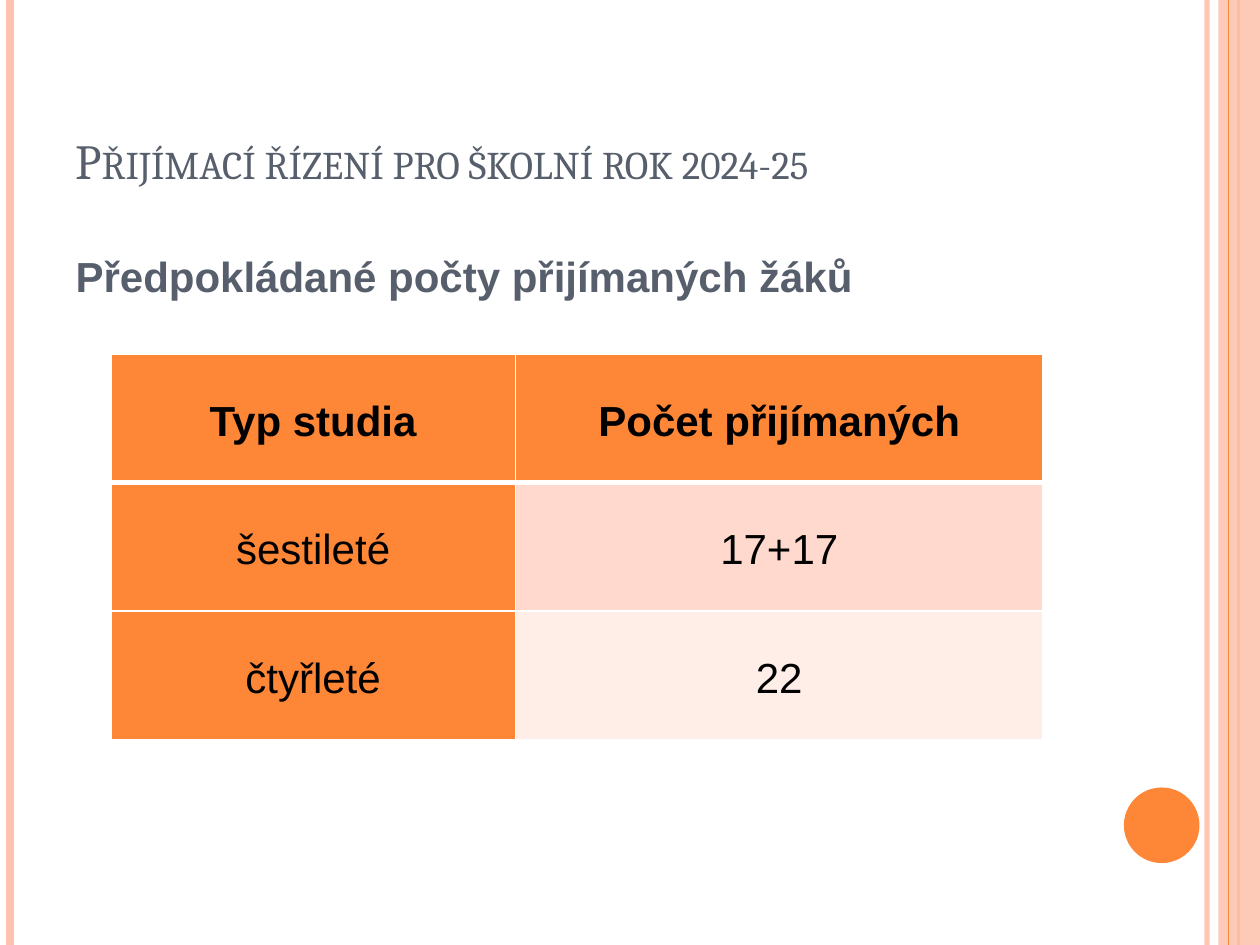
from dataclasses import dataclass

from lxml import etree
from pptx import Presentation
from pptx.dml.color import RGBColor
from pptx.enum.shapes import MSO_CONNECTOR, MSO_SHAPE
from pptx.enum.text import MSO_ANCHOR, MSO_AUTO_SIZE, PP_ALIGN
from pptx.oxml.ns import qn
from pptx.util import Inches, Pt

STRAIGHT = MSO_CONNECTOR.STRAIGHT
RECTANGLE = MSO_SHAPE.RECTANGLE
OVAL = MSO_SHAPE.OVAL
TOP, MIDDLE, BOTTOM = MSO_ANCHOR.TOP, MSO_ANCHOR.MIDDLE, MSO_ANCHOR.BOTTOM
LEFT, CENTER = PP_ALIGN.LEFT, PP_ALIGN.CENTER
NO_AUTOFIT = MSO_AUTO_SIZE.NONE

ORANGE = RGBColor(0xFE, 0x86, 0x37)
PEACH = RGBColor(0xFE, 0xC3, 0xAE)
BAND_DARK = RGBColor(0xFF, 0xD9, 0xCE)
BAND_LIGHT = RGBColor(0xFF, 0xED, 0xE8)
SLATE = RGBColor(0x57, 0x5F, 0x6D)
BLACK = RGBColor(0, 0, 0)
WHITE = RGBColor(0xFF, 0xFF, 0xFF)

SLIDE_WIDTH, SLIDE_HEIGHT = 10, 7.5


@dataclass
class Stripe:
    x: float
    color: RGBColor
    weight: float
    opacity: int = 100


@dataclass
class StudyRow:
    study: str
    count: str
    count_fill: RGBColor
    bold: bool = False
    bottom_border: float = 1


BACK_STRIPES = [
    Stripe(9.58, PEACH, 3, 93),
    Stripe(0.08, PEACH, 4.5),
    Stripe(9.83, ORANGE, 1.5),
]
FRONT_STRIPE = Stripe(9.75, ORANGE, 0.75)

ROWS = [
    StudyRow("Typ studia", "Počet přijímaných", ORANGE, True, 3),
    StudyRow("šestileté", "17+17", BAND_DARK),
    StudyRow("čtyřleté", "22", BAND_LIGHT),
]
COLUMN_WIDTHS = [3.21, 4.19]
ROW_HEIGHT = 1.02


def set_opacity(element, percent: int) -> None:
    color = next(element.iter(qn("a:srgbClr")))
    etree.SubElement(color, qn("a:alpha"), val=str(percent * 1000))


def draw_stripe(slide, stripe: Stripe) -> None:
    x = Inches(stripe.x)
    connector = slide.shapes.add_connector(STRAIGHT, x, 0, x, Inches(SLIDE_HEIGHT))
    connector.line.color.rgb = stripe.color
    connector.line.width = Pt(stripe.weight)
    properties = connector._element.spPr
    if stripe.opacity < 100:
        set_opacity(properties, stripe.opacity)
    etree.SubElement(properties, qn("a:effectLst"))


def draw_shape(slide, kind, left: float, top: float, width: float, height: float,
               color: RGBColor, opacity: int = 100) -> None:
    shape = slide.shapes.add_shape(
        kind, Inches(left), Inches(top), Inches(width), Inches(height))
    shape.shadow.inherit = False
    shape.fill.solid()
    shape.fill.fore_color.rgb = color
    shape.line.fill.background()
    if opacity < 100:
        set_opacity(shape._element.spPr, opacity)


def write_text(text_frame, text: str, *, font: str = "Arial", size: float = 24,
               color: RGBColor = BLACK, bold: bool = False, align=LEFT,
               line_spacing: float = 1.0, space_before: float = 0,
               small_caps: bool = False) -> None:
    paragraph = text_frame.paragraphs[0]
    paragraph.alignment = align
    paragraph.line_spacing = line_spacing
    paragraph.space_before = Pt(space_before)
    run = paragraph.add_run()
    run.text = text
    run.font.name = font
    run.font.size = Pt(size)
    run.font.color.rgb = color
    run.font.bold = bold
    if small_caps:
        run.font._element.set("cap", "small")


def place_placeholder(shape, top: float, height: float, anchor) -> None:
    shape.left, shape.top = Inches(0.5), Inches(top)
    shape.width, shape.height = Inches(8.17), Inches(height)
    shape.text_frame.word_wrap = True
    shape.text_frame.auto_size = NO_AUTOFIT
    shape.text_frame.vertical_anchor = anchor


def remove_bullet(paragraph) -> None:
    properties = paragraph._p.get_or_add_pPr()
    properties.set("marL", "0")
    properties.set("indent", "0")
    etree.SubElement(properties, qn("a:buNone"))


def set_borders(cell, top: float, bottom: float) -> None:
    properties = cell._tc.get_or_add_tcPr()
    sides = {"lnL": 1, "lnR": 1, "lnT": top, "lnB": bottom}
    for index, (side, weight) in enumerate(sides.items()):
        line = etree.Element(qn(f"a:{side}"), w=str(Pt(weight)))
        fill = etree.SubElement(line, qn("a:solidFill"))
        etree.SubElement(fill, qn("a:srgbClr"), val=str(WHITE))
        properties.insert(index, line)


def draw_table(slide, rows: list[StudyRow]) -> None:
    table = slide.shapes.add_table(
        len(rows), len(COLUMN_WIDTHS), Inches(0.88), Inches(2.81),
        Inches(sum(COLUMN_WIDTHS)), Inches(ROW_HEIGHT * len(rows))).table
    for column, width in zip(table.columns, COLUMN_WIDTHS):
        column.width = Inches(width)
    top_border = 1
    for row_index, row in enumerate(rows):
        table.rows[row_index].height = Inches(ROW_HEIGHT)
        contents = [(row.study, ORANGE), (row.count, row.count_fill)]
        for column_index, (text, fill) in enumerate(contents):
            cell = table.cell(row_index, column_index)
            cell.fill.solid()
            cell.fill.fore_color.rgb = fill
            cell.vertical_anchor = MIDDLE
            cell.margin_left = cell.margin_right = Inches(0.07)
            cell.margin_top = cell.margin_bottom = 0
            set_borders(cell, top_border, row.bottom_border)
            write_text(cell.text_frame, text, bold=row.bold, align=CENTER,
                       line_spacing=1.15)
        top_border = row.bottom_border


def main() -> None:
    presentation = Presentation()
    presentation.slide_width = Inches(SLIDE_WIDTH)
    presentation.slide_height = Inches(SLIDE_HEIGHT)
    slide = presentation.slides.add_slide(presentation.slide_layouts[1])
    slide.background.fill.solid()
    slide.background.fill.fore_color.rgb = WHITE

    for stripe in BACK_STRIPES:
        draw_stripe(slide, stripe)
    draw_shape(slide, RECTANGLE, 9.67, 0, 0.33, SLIDE_HEIGHT, PEACH, 87)
    draw_stripe(slide, FRONT_STRIPE)
    draw_shape(slide, OVAL, 8.92, 6.25, 0.6, 0.6, ORANGE)

    title = slide.shapes.title
    place_placeholder(title, 0.3, 1.25, BOTTOM)
    write_text(title.text_frame, "Přijímací řízení pro školní rok 2024-25",
               font="Cambria", size=28, color=SLATE, small_caps=True)

    body = slide.placeholders[1]
    place_placeholder(body, 1.94, 4.57, TOP)
    write_text(body.text_frame, "Předpokládané počty přijímaných žáků",
               color=SLATE, bold=True, space_before=6)
    remove_bullet(body.text_frame.paragraphs[0])

    draw_table(slide, ROWS)
    presentation.save("out.pptx")


if __name__ == "__main__":
    main()
